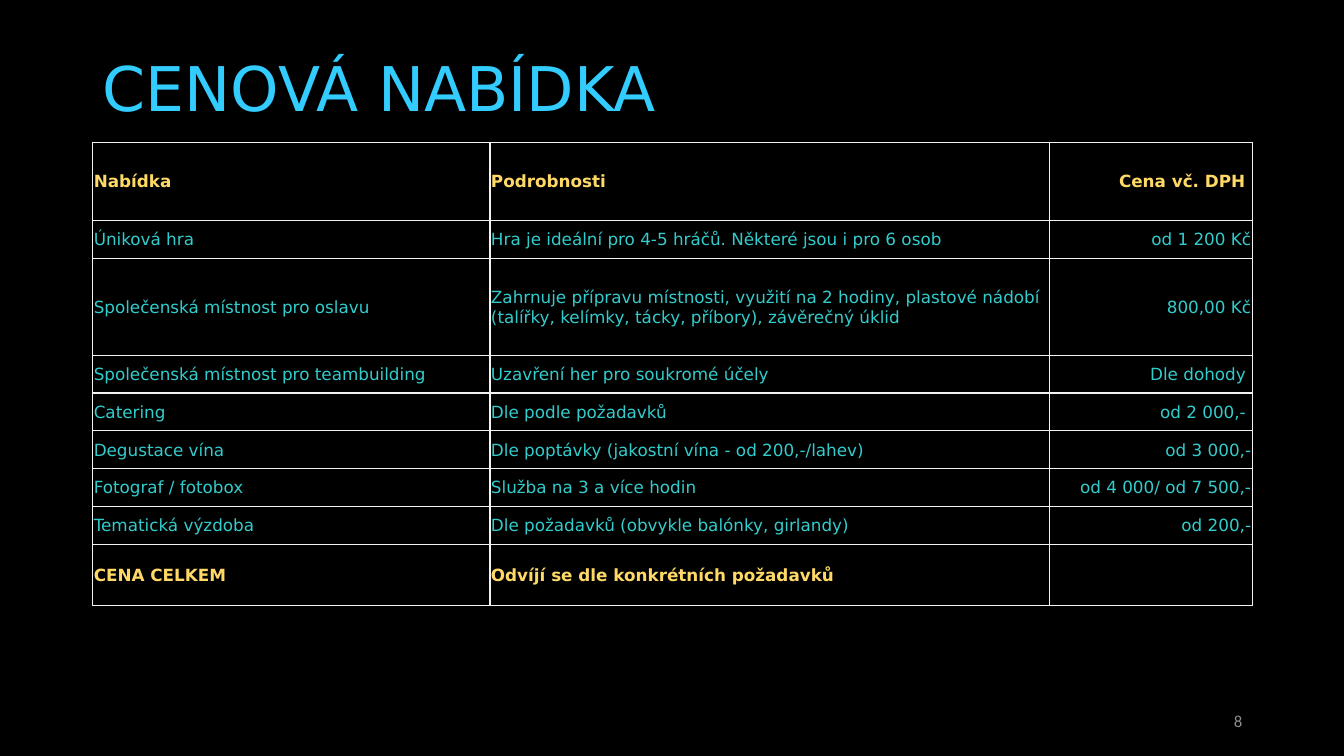
from lxml.etree import SubElement
from pptx import Presentation
from pptx.dml.color import RGBColor
from pptx.enum.text import MSO_ANCHOR, PP_ALIGN
from pptx.oxml.ns import qn
from pptx.util import Inches, Pt

TITLE = "CENOVÁ NABÍDKA"
PAGE_NUMBER = "8"
OFFERS = [
    ("Nabídka", "Podrobnosti", "Cena vč. DPH "),
    ("Úniková hra", "Hra je ideální pro 4-5 hráčů. Některé jsou i pro 6 osob", "od 1 200 Kč"),
    ("Společenská místnost pro oslavu",
     "Zahrnuje přípravu místnosti, využití na 2 hodiny, plastové nádobí "
     "(talířky, kelímky, tácky, příbory), závěrečný úklid", "800,00 Kč"),
    ("Společenská místnost pro teambuilding", "Uzavření her pro soukromé účely", "Dle dohody "),
    ("Catering", "Dle podle požadavků", "od 2 000,- "),
    ("Degustace vína", "Dle poptávky (jakostní vína - od 200,-/lahev)", "od 3 000,-"),
    ("Fotograf / fotobox", "Služba na 3 a více hodin", "od 4 000/ od 7 500,-"),
    ("Tematická výzdoba", "Dle požadavků (obvykle balónky, girlandy)", "od 200,-"),
    ("CENA CELKEM", "Odvíjí se dle konkrétních požadavků", ""),
]
COLUMN_WIDTHS = (3.94, 5.55, 2.01)
TALL_ROWS = {0: 0.78, 2: 0.96, 8: 0.61}
LEFT, TABLE_TOP, WIDTH, TABLE_HEIGHT = 0.92, 1.41, 11.5, 4.6
PLAIN_HEIGHT = (TABLE_HEIGHT - sum(TALL_ROWS.values())) / (len(OFFERS) - len(TALL_ROWS))
EMPHASIZED_ROWS = (0, len(OFFERS) - 1)
PRICE_COLUMN = 2

BLACK = RGBColor(0x00, 0x00, 0x00)
SKY = RGBColor(0x33, 0xCC, 0xFF)
TEAL = RGBColor(0x33, 0xCC, 0xCC)
GOLD = RGBColor(0xFF, 0xD9, 0x66)
GRAY = RGBColor(0x8C, 0x8C, 0x8C)
BORDER = RGBColor(0xF2, 0xF2, 0xF2)


def style(paragraph, size, color, face="DejaVu Sans", bold=False, align=PP_ALIGN.LEFT):
    """Format one paragraph."""
    paragraph.alignment = align
    font = paragraph.font
    font.size, font.name, font.bold = Pt(size), face, bold
    font.color.rgb = color


def add_borders(cell):
    """Outline all four sides of a cell."""
    properties = cell._tc.get_or_add_tcPr()
    for position, side in enumerate(("lnL", "lnR", "lnT", "lnB")):
        line = SubElement(properties, qn(f"a:{side}"), w=str(Pt(1)))
        fill = SubElement(line, qn("a:solidFill"))
        SubElement(fill, qn("a:srgbClr"), val=str(BORDER))
        properties.insert(position, line)


def add_offer_table(slide):
    """Build the price table."""
    table = slide.shapes.add_table(
        len(OFFERS), len(COLUMN_WIDTHS), Inches(LEFT), Inches(TABLE_TOP),
        Inches(WIDTH), Inches(TABLE_HEIGHT)).table
    table.first_row = table.horz_banding = False
    for column, width in zip(table.columns, COLUMN_WIDTHS):
        column.width = Inches(width)
    for r, offer in enumerate(OFFERS):
        table.rows[r].height = Inches(TALL_ROWS.get(r, PLAIN_HEIGHT))
        emphasized = r in EMPHASIZED_ROWS
        for c, text in enumerate(offer):
            cell = table.cell(r, c)
            cell.text = text
            cell.vertical_anchor = MSO_ANCHOR.MIDDLE
            cell.margin_left = cell.margin_right = cell.margin_top = Inches(0.01)
            cell.margin_bottom = 0
            cell.fill.solid()
            cell.fill.fore_color.rgb = BLACK
            add_borders(cell)
            style(cell.text_frame.paragraphs[0], 12, GOLD if emphasized else TEAL,
                  bold=emphasized,
                  align=PP_ALIGN.RIGHT if c == PRICE_COLUMN else PP_ALIGN.LEFT)


def main():
    """Create the price offer slide."""
    deck = Presentation()
    deck.slide_width, deck.slide_height = Inches(13.33), Inches(7.5)
    slide = deck.slides.add_slide(deck.slide_layouts[5])
    slide.background.fill.solid()
    slide.background.fill.fore_color.rgb = BLACK

    title = slide.shapes.title
    title.left, title.top = Inches(LEFT), Inches(0.4)
    title.width, title.height = Inches(WIDTH), Inches(1.01)
    title.text_frame.text = TITLE
    title.text_frame.vertical_anchor = MSO_ANCHOR.MIDDLE
    heading = title.text_frame.paragraphs[0]
    heading.line_spacing = 0.9
    style(heading, 44, SKY)

    add_offer_table(slide)

    page = slide.shapes.add_textbox(Inches(9.42), Inches(6.95), Inches(3), Inches(0.4)).text_frame
    page.text = PAGE_NUMBER
    page.word_wrap = True
    page.vertical_anchor = MSO_ANCHOR.MIDDLE
    style(page.paragraphs[0], 12, GRAY, face="Calibri", align=PP_ALIGN.RIGHT)

    deck.save("out.pptx")


if __name__ == "__main__":
    main()
